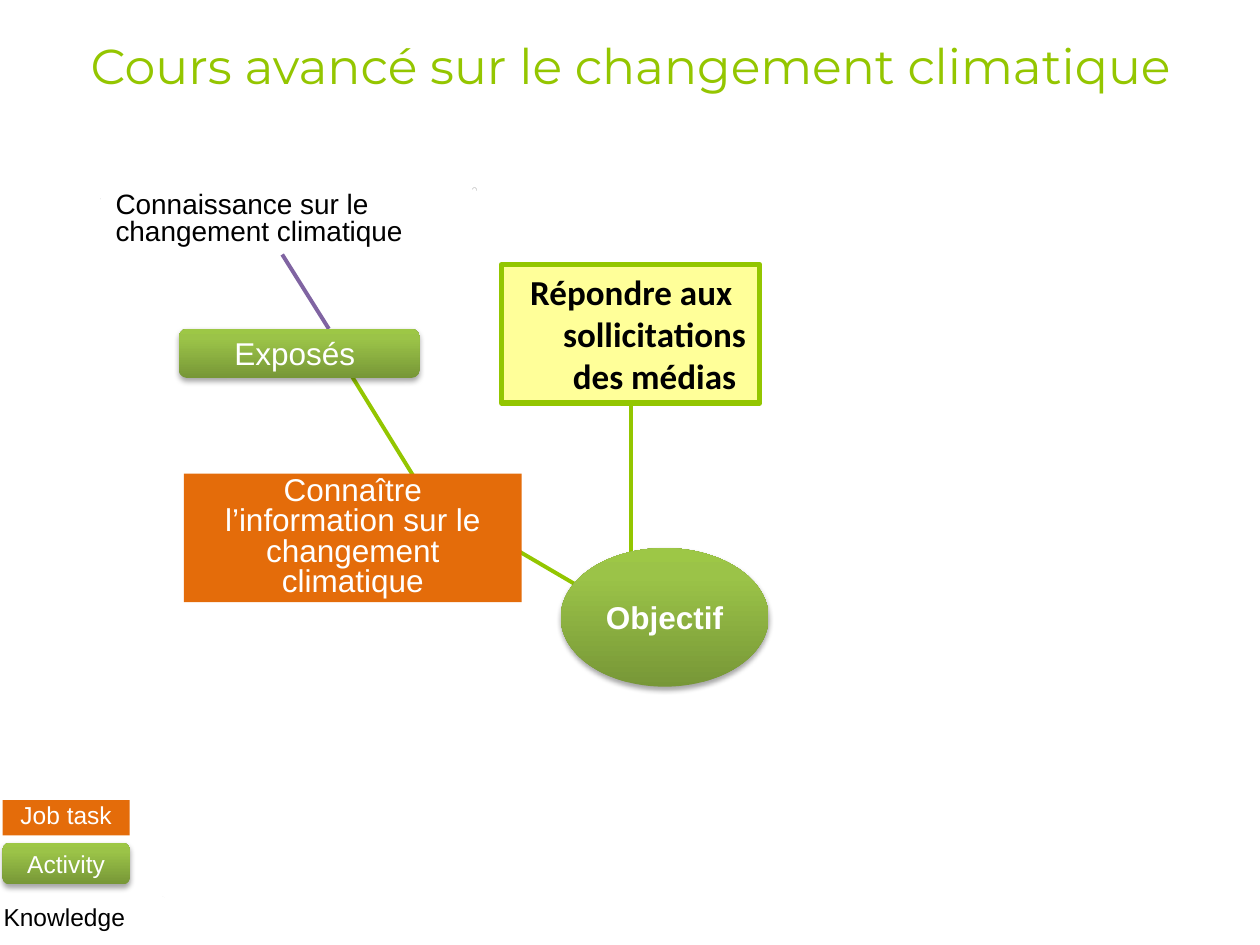
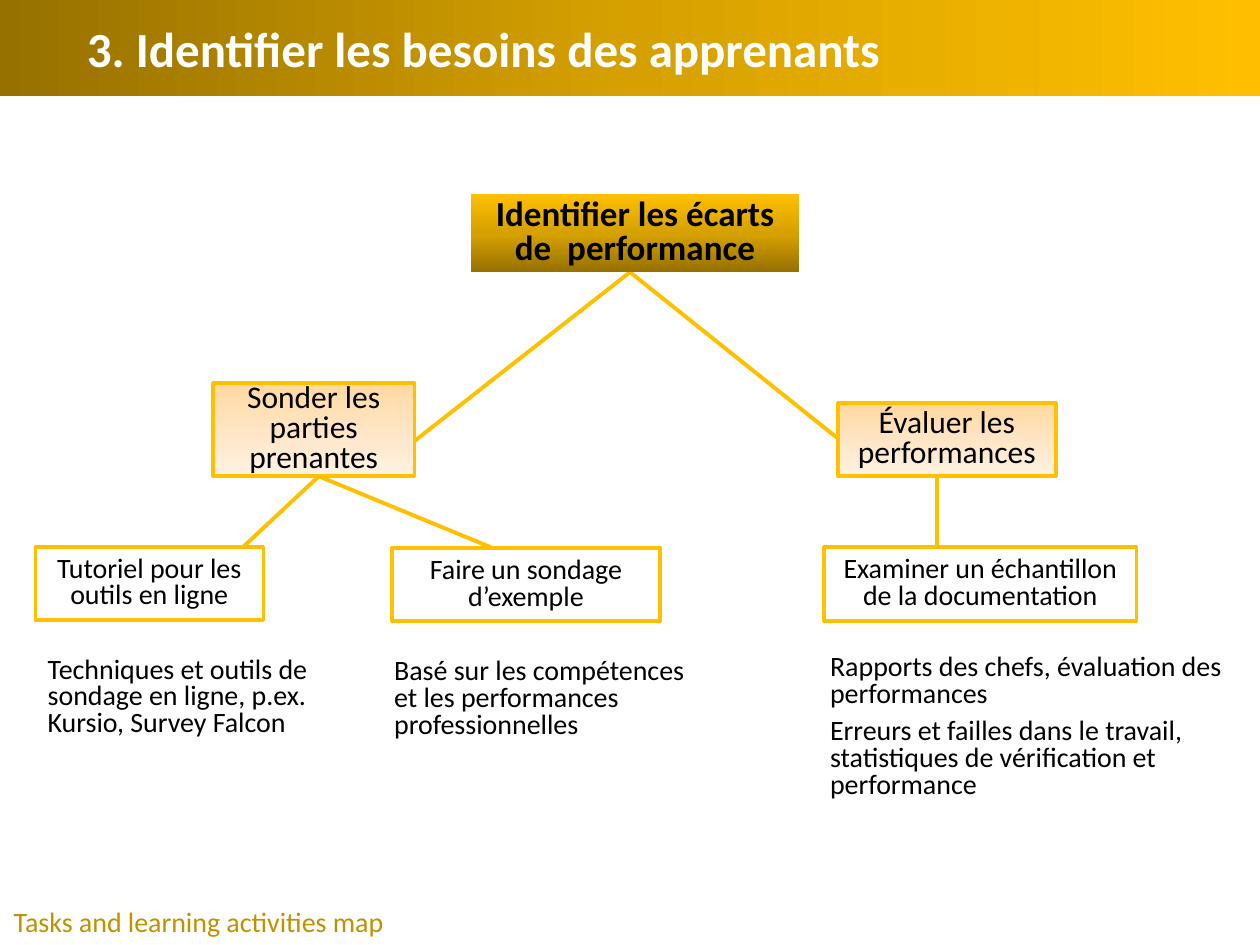
from dataclasses import dataclass, replace
from typing import NamedTuple, Optional, Union

from lxml.etree import SubElement
from pptx import Presentation
from pptx.dml.color import RGBColor
from pptx.enum.shapes import MSO_CONNECTOR, MSO_SHAPE
from pptx.enum.text import MSO_ANCHOR, MSO_AUTO_SIZE, PP_ALIGN
from pptx.oxml.ns import qn
from pptx.util import Inches, Pt

WHITE, BLACK = "FFFFFF", "000000"
GREEN, PURPLE, ORANGE = "93C600", "8064A2", "E46C0A"
GOLD = "FFC000"
HANGING = (0.38, -0.37)


class Gradient(NamedTuple):
    stops: tuple[tuple[int, str], ...]
    angle: int  # counter-clockwise


class Link(NamedTuple):
    start: tuple[float, float]
    end: tuple[float, float]
    color: str


@dataclass(frozen=True)
class Style:
    font: str
    size: int
    color: str = BLACK
    bold: bool = False
    geometry: Optional[MSO_SHAPE] = MSO_SHAPE.RECTANGLE  # None: plain text box
    fill: Union[str, Gradient, None] = None
    line: Optional[str] = None
    line_width: float = 2
    shadow: bool = False
    align: PP_ALIGN = PP_ALIGN.CENTER
    anchor: MSO_ANCHOR = MSO_ANCHOR.MIDDLE
    spacing: float = 1.0
    indent: tuple[float, float] = (0, 0)


class Node(NamedTuple):
    text: str
    left: float
    top: float
    width: float
    height: float
    style: Style


LEAF = Gradient(((0, "779737"), (80, "9BC348"), (100, "9DC746")), 90)
AMBER = Gradient(((0, "977100"), (50, "D6A100"), (100, "FFBF00")), 90)
PEACH = Gradient(((0, "FFD89F"), (50, "FFE5C5"), (100, "FFF2E2")), 270)

# Styles of the course map
COURSE_TITLE = Style("Montserrat", 28, "94C600", geometry=None,
                     anchor=MSO_ANCHOR.TOP, indent=HANGING)
ACTIVITY = Style("Arial", 18, WHITE, geometry=MSO_SHAPE.ROUNDED_RECTANGLE,
                 fill=LEAF, shadow=True)
OBJECTIVE = replace(ACTIVITY, geometry=MSO_SHAPE.OVAL, bold=True)
JOB_TASK = Style("Arial", 18, WHITE, fill=ORANGE, spacing=0.8)
KNOWLEDGE = Style("Arial", 16, geometry=MSO_SHAPE.HORIZONTAL_SCROLL, fill=WHITE,
                  line=WHITE, align=PP_ALIGN.LEFT, spacing=0.8)
GOAL = Style("Calibri", 20, bold=True, fill="FFFF99", line=GREEN, line_width=3,
             anchor=MSO_ANCHOR.TOP, indent=HANGING)

# Styles of the needs tree
BAND_TITLE = Style("Calibri", 28, WHITE, bold=True, fill=AMBER._replace(angle=0),
                   align=PP_ALIGN.LEFT, indent=(0.59, 0))
ROOT = Style("Calibri", 20, bold=True, fill=AMBER, spacing=0.8)
BRANCH = Style("Calibri", 18, fill=PEACH, line=GOLD, spacing=0.8)
TASK = replace(BRANCH, size=16, fill=WHITE)
DETAIL = Style("Calibri", 16, geometry=None, align=PP_ALIGN.LEFT,
               anchor=MSO_ANCHOR.TOP, spacing=0.8)
FOOTER = replace(DETAIL, color="C09200", spacing=1.0, indent=HANGING)

COURSE_LINKS = [
    Link((3.58, 4.06), (4.57, 4.64), GREEN),
    Link((5.01, 3.21), (5.01, 4.57), GREEN),
    Link((3.35, 3.89), (2.61, 2.69), GREEN),
    Link((2.61, 2.61), (2.24, 2.02), PURPLE),
]
COURSE_NODES = [
    Node("Connaissance sur le changement climatique",
         0.75, 1.47, 3.05, 0.55, KNOWLEDGE),
    Node("Exposés ", 1.42, 2.61, 1.91, 0.39, ACTIVITY),
    Node("Connaître l’information sur le changement climatique",
         1.46, 3.76, 2.68, 1.02, JOB_TASK),
    Node("Répondre aux sollicitations des médias", 3.98, 2.1, 2.05, 1.1, GOAL),
    Node("Objectif", 4.45, 4.35, 1.65, 1.1, OBJECTIVE),
    Node("Job task", 0.02, 6.35, 1.01, 0.28, replace(JOB_TASK, size=14)),
    Node("Activity", 0.02, 6.69, 1.01, 0.33, replace(ACTIVITY, size=14)),
    Node("Knowledge", -0.12, 7.1, 1.44, 0.4, replace(KNOWLEDGE, size=14)),
]

ROOT_FOOT, SURVEY_FOOT = (5, 2.16), (2.53, 3.78)
NEEDS_LINKS = [
    Link(ROOT_FOOT, (3.29, 3.5), GOLD),
    Link(ROOT_FOOT, (6.65, 3.48), GOLD),
    Link(SURVEY_FOOT, (1.32, 4.91), GOLD),
    Link(SURVEY_FOOT, (3.91, 4.35), GOLD),
    Link((7.44, 3.2), (7.44, 4.91), GOLD),
]
NEEDS_NODES = [
    Node("Identifier les écarts de  performance", 3.74, 1.54, 2.6, 0.62, ROOT),
    Node("Sonder les parties prenantes", 1.69, 3.04, 1.6, 0.74, BRANCH),
    Node("Évaluer les performances", 6.65, 3.2, 1.73, 0.58, BRANCH),
    Node("Tutoriel pour les outils en ligne", 0.28, 4.34, 1.81, 0.58, TASK),
    Node("Faire un sondage d’exemple", 3.11, 4.35, 2.13, 0.58, TASK),
    Node("Examiner un échantillon de la documentation",
         6.54, 4.34, 2.48, 0.59, TASK),
    Node("Techniques et outils de sondage en ligne, p.ex. Kursio, Survey Falcon",
         0.28, 5.17, 2.52, 0.63, DETAIL),
    Node("Basé sur les compétences et les performances professionnelles",
         3.03, 5.18, 2.52, 0.55, DETAIL),
    Node("Rapports des chefs, évaluation des performances\n"
         "Erreurs et failles dans le travail, statistiques de vérification "
         "et performance", 6.49, 5.15, 3.46, 1.06, DETAIL),
    Node("Tasks and learning activities map", 0, 7.13, 3.19, 0.36, FOOTER),
]


def rgb(color: str) -> RGBColor:
    return RGBColor.from_string(color)


def paint(shape, fill: Union[str, Gradient, None]) -> None:
    if fill is None:
        shape.fill.background()
    elif isinstance(fill, str):
        shape.fill.solid()
        shape.fill.fore_color.rgb = rgb(fill)
    else:
        shape.fill.gradient()
        shape.fill.gradient_angle = fill.angle
        stops = shape._element.spPr.find(".//" + qn("a:gsLst"))
        for stop in list(stops):
            stops.remove(stop)
        for position, color in fill.stops:
            stop = SubElement(stops, qn("a:gs"), pos=str(position * 1000))
            SubElement(stop, qn("a:srgbClr"), val=color)


def cast_shadow(shape) -> None:
    effects = shape._element.spPr.find(qn("a:effectLst"))
    shadow = SubElement(effects, qn("a:outerShdw"), blurRad=str(Pt(3.1)),
                        dist=str(Pt(1.8)), dir="5400000", rotWithShape="0")
    color = SubElement(shadow, qn("a:srgbClr"), val=BLACK)
    SubElement(color, qn("a:alpha"), val="35000")


def write(shape, text: str, style: Style) -> None:
    frame = shape.text_frame
    frame.text = text
    frame.word_wrap = True
    frame.auto_size = MSO_AUTO_SIZE.NONE
    frame.vertical_anchor = style.anchor
    frame.margin_left = frame.margin_right = Inches(0.1)
    frame.margin_top = frame.margin_bottom = Inches(0.05)
    margin, first_line = style.indent
    for paragraph in frame.paragraphs:
        paragraph.alignment = style.align
        paragraph.line_spacing = style.spacing
        if paragraph is not frame.paragraphs[-1] and len(frame.paragraphs) > 1:
            paragraph.space_after = Pt(6)
        font = paragraph.font
        font.name, font.size, font.bold = style.font, Pt(style.size), style.bold
        font.color.rgb = rgb(style.color)
        properties = paragraph._p.get_or_add_pPr()
        properties.set("marL", str(Inches(margin)))
        properties.set("indent", str(Inches(first_line)))


def format_node(shape, node: Node) -> None:
    """Place, paint and fill in a shape, text box or title placeholder."""
    style = node.style
    shape.left, shape.top = Inches(node.left), Inches(node.top)
    shape.width, shape.height = Inches(node.width), Inches(node.height)
    paint(shape, style.fill)
    if style.line:
        shape.line.color.rgb = rgb(style.line)
        shape.line.width = Pt(style.line_width)
    else:
        shape.line.fill.background()
    shape.shadow.inherit = False
    if style.shadow:
        cast_shadow(shape)
    write(shape, node.text, style)


def add_node(slide, node: Node) -> None:
    box = [Inches(n) for n in (node.left, node.top, node.width, node.height)]
    if node.style.geometry is None:
        shape = slide.shapes.add_textbox(*box)
    else:
        shape = slide.shapes.add_shape(node.style.geometry, *box)
    format_node(shape, node)


def add_link(slide, link: Link) -> None:
    ends = [Inches(n) for n in (*link.start, *link.end)]
    connector = slide.shapes.add_connector(MSO_CONNECTOR.STRAIGHT, *ends)
    connector.line.color.rgb = rgb(link.color)
    connector.line.width = Pt(2.25)
    SubElement(connector._element.spPr, qn("a:effectLst"))


def add_map(deck, title: Node, links: list[Link], nodes: list[Node]) -> None:
    """Add a titled slide with its links behind its nodes."""
    slide = deck.slides.add_slide(deck.slide_layouts.get_by_name("Title Only"))
    format_node(slide.shapes.title, title)
    for link in links:
        add_link(slide, link)
    for node in nodes:
        add_node(slide, node)


def main() -> None:
    deck = Presentation()
    deck.slide_width, deck.slide_height = Inches(10), Inches(7.5)
    add_map(deck, Node("Cours avancé sur le changement climatique",
                       0, 0.23, 10, 0.57, COURSE_TITLE),
            COURSE_LINKS, COURSE_NODES)
    add_map(deck, Node("3. Identifier les besoins des apprenants",
                       0, 0, 10, 0.76, BAND_TITLE),
            NEEDS_LINKS, NEEDS_NODES)
    deck.save("out.pptx")


if __name__ == "__main__":
    main()
